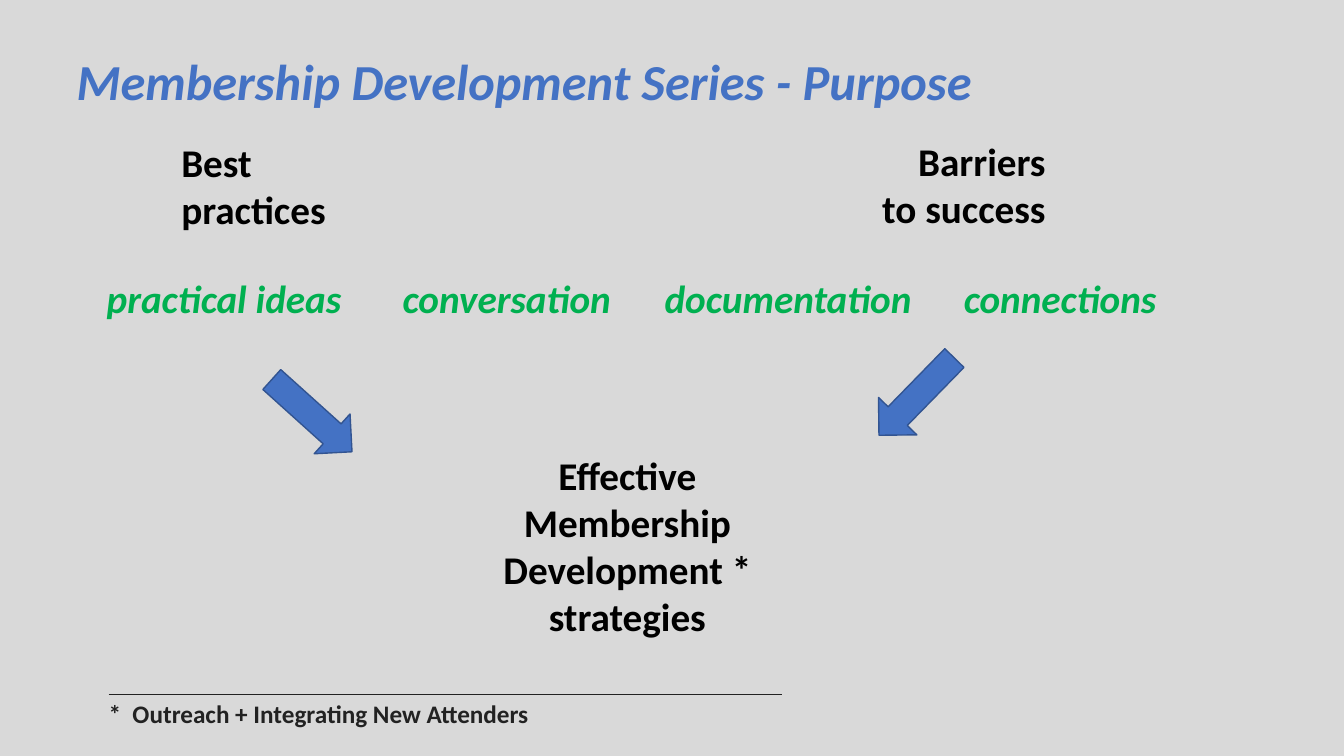
from pptx import Presentation
from pptx.dml.color import RGBColor
from pptx.enum.shapes import MSO_CONNECTOR, MSO_SHAPE
from pptx.enum.text import PP_ALIGN
from pptx.oxml.xmlchemy import OxmlElement
from pptx.util import Cm, Pt

HUES = {
    "back": "D9D9D9",
    "blue": "4472C4",
    "edge": "325491",
    "green": "00B050",
    "black": "000000",
    "note": "222222",
}


def tint(name):
    return RGBColor.from_string(HUES[name])


def add_text(slide, text, left, top, width, height, size=28, hue="black",
             align=PP_ALIGN.LEFT, slant=False):
    box = slide.shapes.add_textbox(Cm(left), Cm(top), Cm(width), Cm(height))
    frame = box.text_frame
    frame.word_wrap = True
    frame.text = text
    para = frame.paragraphs[0]
    para.alignment = align
    for run in para.runs:
        font = run.font
        font.name = "Calibri"
        font.size = Pt(size)
        font.bold = True
        font.italic = slant
        font.color.rgb = tint(hue)
    return para


def add_arrow(slide, left, top, turn):
    arrow = slide.shapes.add_shape(
        MSO_SHAPE.RIGHT_ARROW, Cm(left), Cm(top), Cm(2.72), Cm(1.35))
    arrow.rotation = turn
    arrow.shadow.inherit = False
    arrow.fill.solid()
    arrow.fill.fore_color.rgb = tint("blue")
    arrow.line.color.rgb = tint("edge")
    arrow.line.width = Pt(1)


def add_rule(slide, left, right, top):
    rule = slide.shapes.add_connector(
        MSO_CONNECTOR.STRAIGHT, Cm(left), Cm(top), Cm(right), Cm(top))
    rule.line.color.rgb = tint("note")
    rule.line.width = Pt(0.75)
    rule._element.spPr.append(OxmlElement("a:effectLst"))


def add_note(slide, text, left, top, width, height, indent):
    para = add_text(slide, text, left, top, width, height, 18, "note")
    props = para._p.get_or_add_pPr()
    props.set("marL", str(Cm(indent)))
    props.set("indent", str(-Cm(indent)))


def main():
    deck = Presentation()
    deck.slide_width = Cm(33.87)
    deck.slide_height = Cm(19.05)
    slide = deck.slides.add_slide(deck.slide_layouts[6])
    fill = slide.background.fill
    fill.solid()
    fill.fore_color.rgb = tint("back")

    add_text(slide, "Membership Development Series - Purpose",
             1.68, 1.14, 25.27, 1.8, 36, "blue", slant=True)
    add_text(slide, "Best practices", 4.32, 3.35, 4.42, 2.64)
    add_text(slide, "Barriers to success", 21.9, 3.33, 4.7, 2.64,
             align=PP_ALIGN.RIGHT)

    themes = [("practical ideas", 2.44), ("conversation", 9.9),
              ("documentation", 16.5), ("connections", 24.04)]
    for theme, left in themes:
        add_text(slide, theme, left, 6.78, 7, 1.45, hue="green", slant=True)

    add_arrow(slide, 6.5, 9.8, 42)
    add_arrow(slide, 21.74, 9.32, 134.3)
    add_text(slide, "Effective Membership Development * strategies",
             12.19, 11.25, 7.24, 5.05, align=PP_ALIGN.CENTER)

    add_rule(slide, 2.74, 19.7, 17.49)
    add_note(slide, "*\tOutreach + Integrating New Attenders",
             2.49, 17.47, 20.98, 1.03, 0.6)
    deck.save("out.pptx")


if __name__ == "__main__":
    main()
